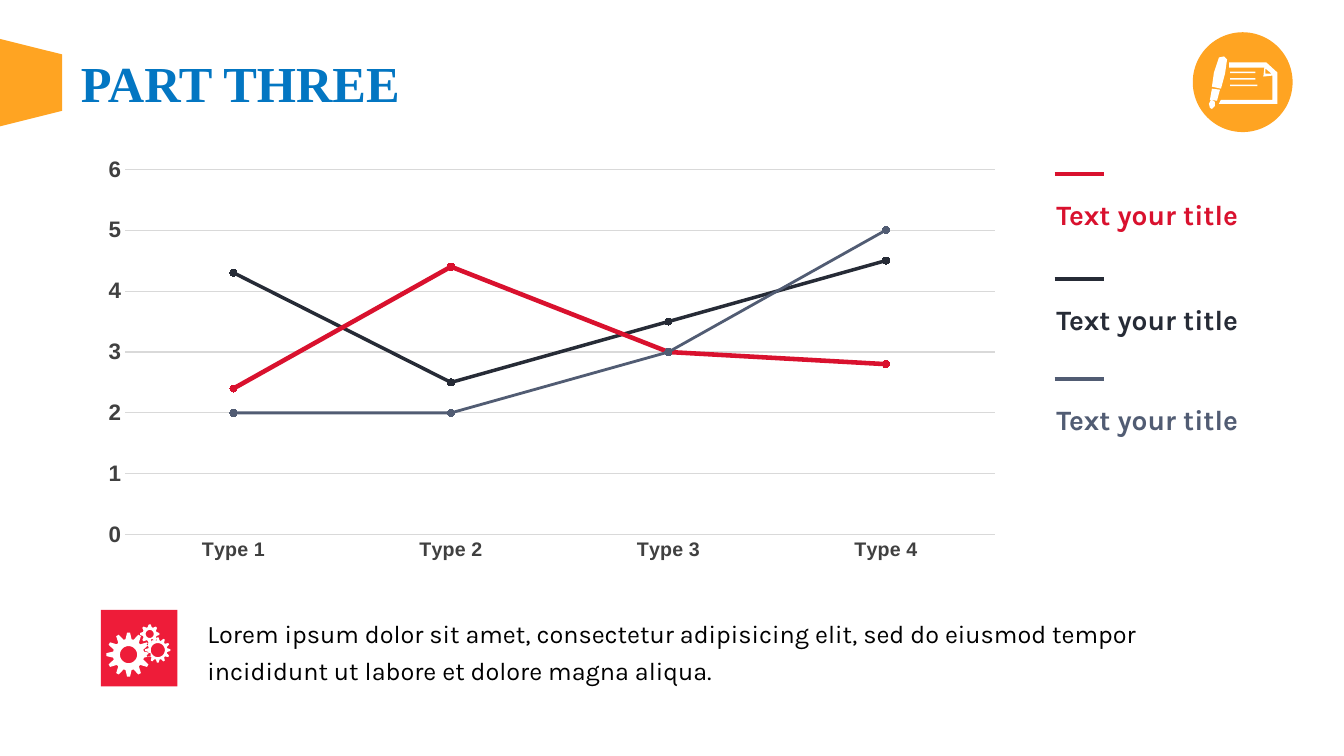
from dataclasses import dataclass
from math import cos, pi, sin

from lxml import etree
from pptx import Presentation
from pptx.chart.data import CategoryChartData
from pptx.dml.color import RGBColor
from pptx.enum.chart import XL_CHART_TYPE, XL_MARKER_STYLE, XL_TICK_MARK
from pptx.enum.shapes import MSO_CONNECTOR, MSO_SHAPE
from pptx.enum.text import MSO_AUTO_SIZE, PP_ALIGN
from pptx.oxml.ns import qn
from pptx.util import Inches, Pt

LINE_CHART = XL_CHART_TYPE.LINE_MARKERS
CIRCLE = XL_MARKER_STYLE.CIRCLE
NO_TICK = XL_TICK_MARK.NONE
STRAIGHT = MSO_CONNECTOR.STRAIGHT
ELLIPSE, SQUARE, TRAPEZOID = MSO_SHAPE.OVAL, MSO_SHAPE.RECTANGLE, MSO_SHAPE.TRAPEZOID
FIT_SHAPE = MSO_AUTO_SIZE.SHAPE_TO_FIT_TEXT
LEFT, CENTER = PP_ALIGN.LEFT, PP_ALIGN.CENTER

# The slide is a grid of square cells, 133.3 columns by 75 rows.
CELL = Inches(0.1)
COLUMNS, ROWS = 133.3, 75


@dataclass(frozen=True)
class Theme:
    blue: str = "0376C2"
    orange: str = "FFA422"
    crimson: str = "D9112E"
    navy: str = "262B36"
    slate: str = "515C73"
    red: str = "EE1C39"
    label: str = "404040"
    grid: str = "D9D9D9"
    white: str = "FFFFFF"
    black: str = "000000"
    title_font: str = "Times New Roman"
    body_font: str = "Karla"
    axis_font: str = "Arial"
    title_size: int = 36
    legend_size: int = 20
    body_size: int = 18
    value_size: int = 16
    category_size: int = 14
    chart_size: int = 10


THEME = Theme()

CATEGORIES = ["Type 1", "Type 2", "Type 3", "Type 4"]
# name, values, colour, line width
SERIES = [
    ("Series 1", (4.3, 2.5, 3.5, 4.5), THEME.navy, 2.5),
    ("Series 2", (2.4, 4.4, 3, 2.8), THEME.crimson, 3.25),
    ("Series 3", (2, 2, 3, 5), THEME.slate, 2),
]
LEGEND = [(17.3, THEME.crimson), (27.7, THEME.navy), (37.6, THEME.slate)]

PEN_BARREL = [(120.9, 5.7), (121.4, 5.6), (121.7, 5.9), (121.5, 7.3),
              (121.1, 8.8), (120.2, 8.6), (120.4, 7.2)]
PEN_GRIP = [(120.2, 8.8), (121, 8.9), (120.7, 10), (120, 9.9)]
PEN_NIB = [(120.1, 9.9), (120.5, 10.1), (120.5, 10.5), (120.2, 10.8),
           (120, 10.7), (119.9, 10.3)]
PAGE = [(120.9, 10.3), (126.7, 10.3), (126.7, 7.2), (125.6, 6.2), (121.9, 6.2),
        (121.9, 6.7), (125.4, 6.7), (125.3, 7.6), (126.2, 7.5), (126.2, 9.9),
        (121.1, 9.9)]
PAGE_FOLD = [(125.5, 6.8), (126.1, 7.3), (125.5, 7.3)]
# top row and right column of each line of writing
WRITING = [(7.1, 124.5), (7.75, 124.5), (8.4, 124.7)]

# centre column, centre row, outer radius, root radius, hole radius, teeth
GEARS = [
    (12.75, 64.95, 2.2, 1.55, 0.85, 12),
    (14.85, 62.9, 0.95, 0.7, 0.4, 8),
    (15.65, 64.5, 1.25, 0.95, 0.7, 12),
]


def cells(*counts):
    return [int(count * CELL) for count in counts]


def rgb(colour):
    return RGBColor.from_string(colour)


def style_font(font, name, size, colour, bold=False):
    font.name, font.size, font.bold = name, Pt(size), bold
    font.color.rgb = rgb(colour)


def style_line(line, colour, width):
    line.color.rgb = rgb(colour)
    line.width = Pt(width)


def paint(shape, colour):
    shape.shadow.inherit = False
    shape.fill.solid()
    shape.fill.fore_color.rgb = rgb(colour)
    shape.line.fill.background()


def add_block(slide, preset, box, colour, rotation=0):
    shape = slide.shapes.add_shape(preset, *cells(*box))
    shape.rotation = rotation
    paint(shape, colour)


def add_outline(slide, contours, colour):
    """Draw closed contours as one shape; a contour inside another is a hole."""
    points = [[cells(*point) for point in contour] for contour in contours]
    builder = slide.shapes.build_freeform(*points[0][0], scale=1.0)
    builder.add_line_segments(points[0][1:], close=True)
    for start, *others in points[1:]:
        builder.move_to(*start)
        builder.add_line_segments(others, close=True)
    paint(builder.convert_to_shape(), colour)


def add_text(slide, box, text, font, size, colour, bold=False, align=LEFT, spacing=1.0):
    frame = slide.shapes.add_textbox(*cells(*box)).text_frame
    frame.word_wrap = True
    frame.auto_size = FIT_SHAPE
    paragraph = frame.paragraphs[0]
    paragraph.alignment, paragraph.line_spacing = align, spacing
    run = paragraph.add_run()
    run.text = text
    style_font(run.font, font, size, colour, bold)


def add_legend_entry(slide, row, colour):
    rule = slide.shapes.add_connector(STRAIGHT, *cells(104.6, row, 109.5, row))
    style_line(rule.line, colour, 3)
    etree.SubElement(rule._element.spPr, qn("a:effectLst"))
    add_text(slide, (103.8, row + 1.8, 25.7, 4.4), "Text your title",
             THEME.body_font, THEME.legend_size, colour, bold=True)


def place_plot(chart, **shares):
    """Fix the inner plot area, given as shares of the chart's size."""
    plot_area = chart._chartSpace.chart.plotArea
    for layout in plot_area.findall(qn("c:layout")):
        plot_area.remove(layout)
    layout = etree.Element(qn("c:layout"))
    plot_area.insert(0, layout)
    manual = etree.SubElement(layout, qn("c:manualLayout"))
    settings = {"layoutTarget": "inner", "xMode": "edge", "yMode": "edge", **shares}
    for name, value in settings.items():
        etree.SubElement(manual, qn(f"c:{name}")).set("val", str(value))


def add_line_chart(slide, box):
    data = CategoryChartData()
    data.categories = CATEGORIES
    for name, values, _, _ in SERIES:
        data.add_series(name, values)
    chart = slide.shapes.add_chart(LINE_CHART, *cells(*box), data).chart
    chart.has_legend = chart.has_title = False
    style_font(chart.font, THEME.body_font, THEME.chart_size, THEME.black)
    chart.plots[0].vary_by_categories = False

    for series, (_, _, colour, width) in zip(chart.plots[0].series, SERIES):
        series.smooth = False
        style_line(series.format.line, colour, width)
        marker = series.marker
        marker.style, marker.size = CIRCLE, 5
        marker.format.fill.solid()
        marker.format.fill.fore_color.rgb = rgb(colour)
        style_line(marker.format.line, colour, 0.75)

    categories, values = chart.category_axis, chart.value_axis
    for axis, size in ((categories, THEME.category_size), (values, THEME.value_size)):
        axis.major_tick_mark = axis.minor_tick_mark = NO_TICK
        style_font(axis.tick_labels.font, THEME.axis_font, size, THEME.label, bold=True)
    style_line(categories.format.line, THEME.grid, 0.75)
    values.format.line.fill.background()
    values.minimum_scale, values.maximum_scale, values.major_unit = 0, 6, 1
    style_line(values.major_gridlines.format.line, THEME.grid, 0.75)
    place_plot(chart, x=0.04, y=0.05, w=0.94, h=0.87)


def rectangle(left, top, right, bottom):
    return [(left, top), (right, top), (right, bottom), (left, bottom)]


def ring(column, row, radii):
    """Points at equal angles round a centre, one for each radius."""
    step = 2 * pi / len(radii)
    return [(column + radius * cos((index - 0.5) * step),
             row + radius * sin((index - 0.5) * step))
            for index, radius in enumerate(radii)]


def gear(column, row, outer, root, hole, teeth):
    return [ring(column, row, [outer, outer, root, root] * teeth),
            ring(column, row, [hole] * 32)]


def main():
    presentation = Presentation()
    presentation.slide_width, presentation.slide_height = cells(COLUMNS, ROWS)
    slide = presentation.slides.add_slide(presentation.slide_layouts[6])

    add_text(slide, (6.2, 4.7, 35.3, 7.1), "PART THREE", THEME.title_font,
             THEME.title_size, THEME.blue, bold=True, align=CENTER)
    add_block(slide, TRAPEZOID, (-1.3, 5.1, 8.7, 6.2), THEME.orange, rotation=90)
    add_block(slide, ELLIPSE, (118.3, 3.2, 9.9, 9.9), THEME.orange)
    writing = [rectangle(122, top, right, top + 0.15) for top, right in WRITING]
    add_outline(slide, [PEN_BARREL, PEN_GRIP, PEN_NIB, PAGE, PAGE_FOLD, *writing],
                THEME.white)

    add_line_chart(slide, (8.7, 14.7, 91.8, 41.7))
    for row, colour in LEGEND:
        add_legend_entry(slide, row, colour)

    add_block(slide, SQUARE, (10, 60.5, 7.6, 7.6), THEME.red)
    add_outline(slide, [contour for part in GEARS for contour in gear(*part)],
                THEME.white)
    add_text(slide, (19.6, 60.3, 104.6, 8.3),
             "Lorem ipsum dolor sit amet, consectetur adipisicing elit, sed do eiusmod "
             "tempor incididunt ut labore et dolore magna aliqua.",
             THEME.body_font, THEME.body_size, THEME.black, spacing=1.2)
    presentation.save("out.pptx")


if __name__ == "__main__":
    main()
